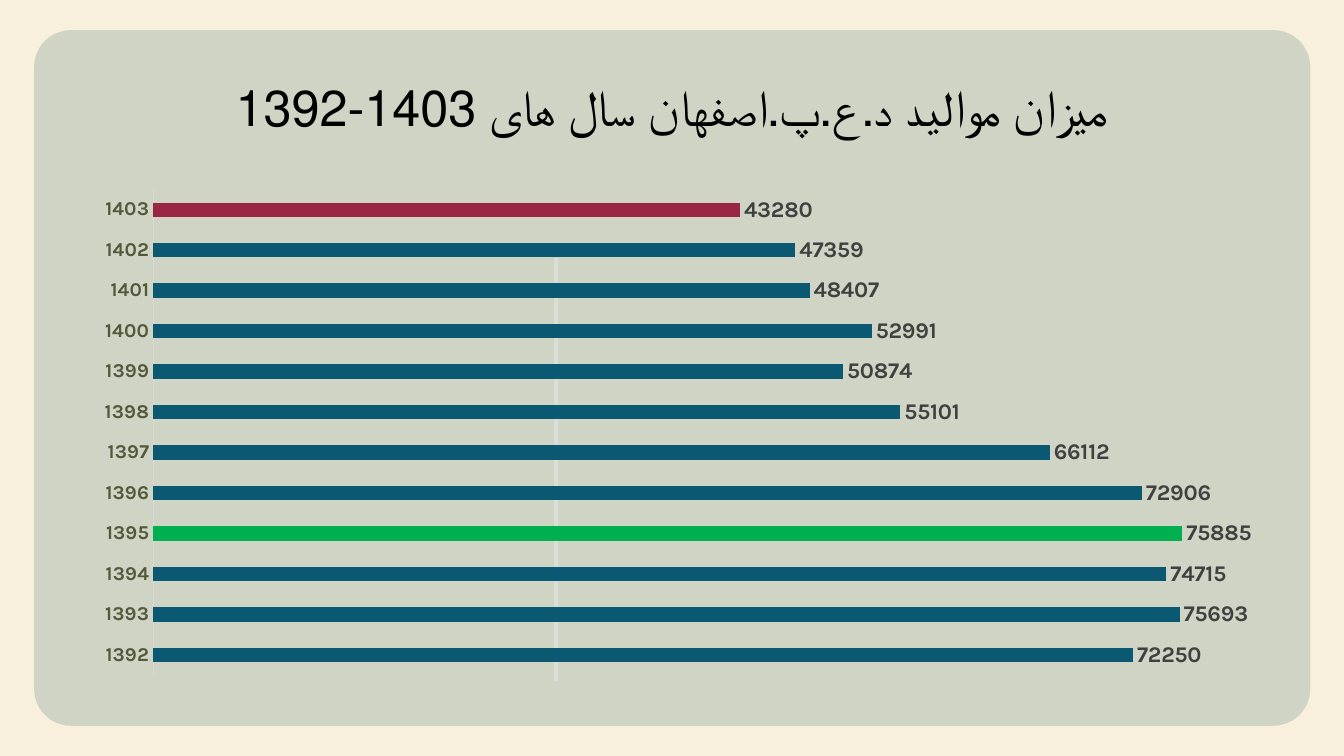
"""Build a slide with a bar chart of yearly births, 1392 to 1403."""
from lxml import etree
from pptx import Presentation
from pptx.chart.data import CategoryChartData
from pptx.dml.color import RGBColor
from pptx.enum.chart import XL_CHART_TYPE, XL_LABEL_POSITION, XL_TICK_MARK
from pptx.enum.shapes import MSO_CONNECTOR, MSO_SHAPE
from pptx.enum.text import MSO_ANCHOR, MSO_AUTO_SIZE, PP_ALIGN
from pptx.oxml import parse_xml
from pptx.oxml.ns import nsdecls, qn
from pptx.util import Cm, Pt

BARS = XL_CHART_TYPE.BAR_CLUSTERED
OUT_END = XL_LABEL_POSITION.OUTSIDE_END
NO_TICK = XL_TICK_MARK.NONE
STRAIGHT = MSO_CONNECTOR.STRAIGHT
ROUND = MSO_SHAPE.ROUNDED_RECTANGLE
BOTTOM = MSO_ANCHOR.BOTTOM
NO_FIT = MSO_AUTO_SIZE.NONE
CENTER = PP_ALIGN.CENTER

THEME = {
    "back": "F8EFDD", "panel": "B5C2B6", "rule": "E6EBE7", "axis": "D9D9D9",
    "bar": "0B5872", "peak": "00B050", "low": "992443",
    "title": {"name": "Calibri", "size": Pt(36), "color": "000000"},
    "chart": {"name": "Karla", "size": Pt(10), "color": "000000"},
    "years": {"name": "Karla", "size": Pt(14), "bold": True, "color": "52593B"},
    "label": {"name": "Karla", "size": Pt(16), "bold": True, "color": "404040"},
}
BIRTHS = [72250, 75693, 74715, 75885, 72906, 66112,
          55101, 50874, 52991, 48407, 47359, 43280]


def style(font, form):
    """Apply a dict of format values to a font."""
    for key, val in form.items():
        if key == "color":
            font.color.rgb = RGBColor.from_string(val)
        else:
            setattr(font, key, val)


def paint(fill, tone, alpha=100):
    """Fill with a solid colour at a given opacity in percent."""
    fill.solid()
    fill.fore_color.rgb = RGBColor.from_string(THEME[tone])
    if alpha < 100:
        node = fill._xPr.find(".//" + qn("a:srgbClr"))
        etree.SubElement(node, qn("a:alpha"), val=str(alpha * 1000))


deck = Presentation()
deck.slide_width, deck.slide_height = Cm(33.87), Cm(19.05)
slide = deck.slides.add_slide(deck.slide_layouts[5])
shapes = slide.shapes
paint(slide.background.fill, "back")

panel = shapes.add_shape(ROUND, Cm(0.86), Cm(0.76), Cm(32.16), Cm(17.53))
panel.adjustments[0] = 0.053
panel.shadow.inherit = False
paint(panel.fill, "panel", 60)
panel.line.fill.background()
shapes._spTree.insert(2, panel._element)

rule = shapes.add_connector(STRAIGHT, Cm(14.02), Cm(6.5), Cm(14.02), Cm(17.17))
rule.line.width = Pt(3)
paint(rule.line.fill, "rule", 50)
etree.SubElement(rule._element.spPr, qn("a:effectLst"))

title = shapes.title
place = {"left": Cm(2.08), "top": Cm(1.75), "width": Cm(29.72), "height": Cm(1.83)}
for key, val in place.items():
    setattr(title, key, val)
frame = title.text_frame
frame.text = "میزان موالید د.ع.پ.اصفهان سال های 1403-1392"
for key, val in {"auto_size": NO_FIT, "vertical_anchor": BOTTOM, "word_wrap": True}.items():
    setattr(frame, key, val)
para = frame.paragraphs[0]
para.alignment, para.line_spacing = CENTER, 0.9
para._p.get_or_add_pPr().set("rtl", "1")
style(para.runs[0].font, THEME["title"])

data = CategoryChartData()
data.categories = [str(1392 + i) for i in range(len(BIRTHS))]
data.add_series("Series 1", BIRTHS)
chart = shapes.add_chart(BARS, Cm(2.08), Cm(4.52), Cm(29.72), Cm(12.75), data).chart
chart.has_legend = chart.has_title = False
style(chart.font, THEME["chart"])

years = chart.category_axis
years.major_tick_mark = years.minor_tick_mark = NO_TICK
years.format.line.width = Pt(0.75)
paint(years.format.line.fill, "axis")
style(years.tick_labels.font, THEME["years"])

scale = chart.value_axis
form = {"visible": False, "has_major_gridlines": False,
        "minimum_scale": 0, "maximum_scale": 80000}
for key, val in form.items():
    setattr(scale, key, val)

plot = chart.plots[0]
plot.gap_width, plot.vary_by_categories = 182, False
bars = plot.series[0]
paint(bars.format.fill, "bar")
for tone, pick in {"peak": max, "low": min}.items():
    spot = BIRTHS.index(pick(BIRTHS))
    paint(bars.points[spot].format.fill, tone)
label = bars.data_labels
label.show_value, label.position = True, OUT_END
style(label.font, THEME["label"])

area = chart._chartSpace.find(".//" + qn("c:plotArea"))
for old in area.findall(qn("c:layout")):
    area.remove(old)
sides = {"x": 0.06, "y": 0.02, "w": 0.92, "h": 0.96}
parts = '<c:layoutTarget val="inner"/><c:xMode val="edge"/><c:yMode val="edge"/>'
parts += "".join(f'<c:{key} val="{val}"/>' for key, val in sides.items())
area.insert(0, parse_xml(
    f'<c:layout {nsdecls("c")}><c:manualLayout>{parts}</c:manualLayout></c:layout>'))

deck.save("out.pptx")
